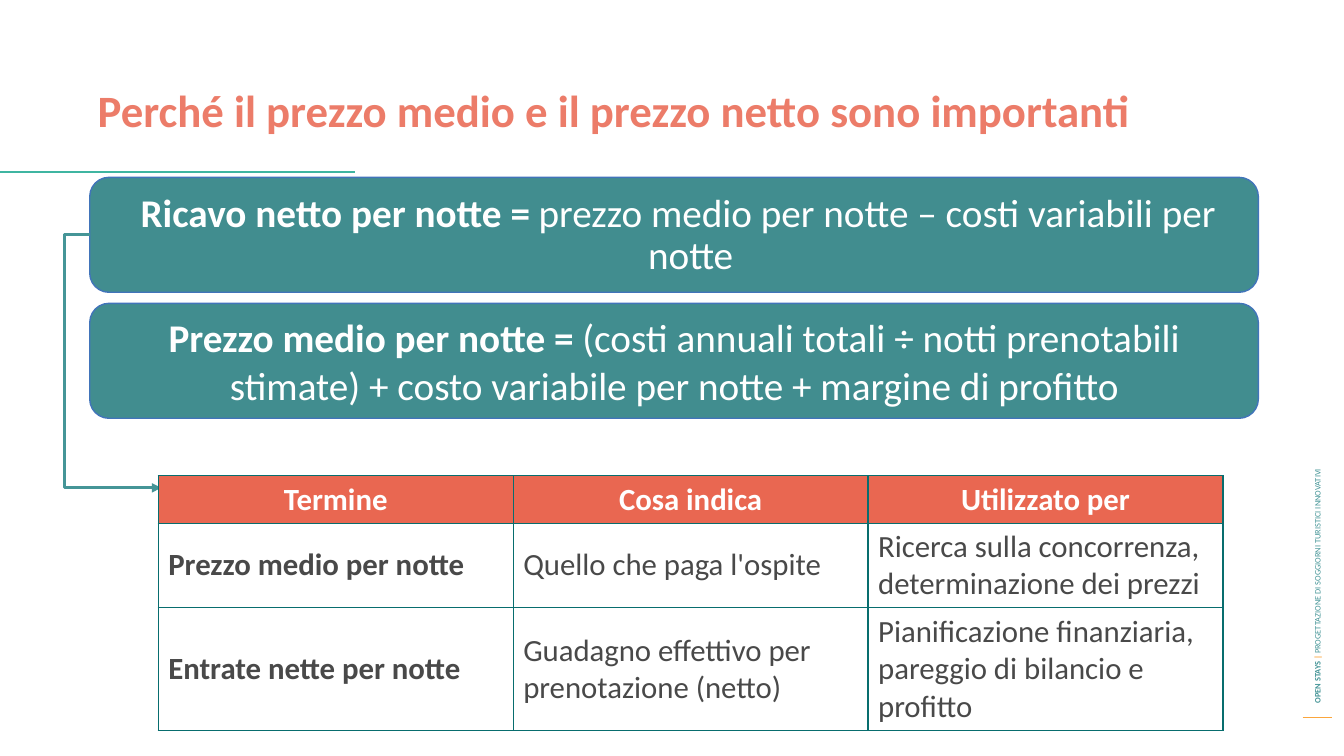
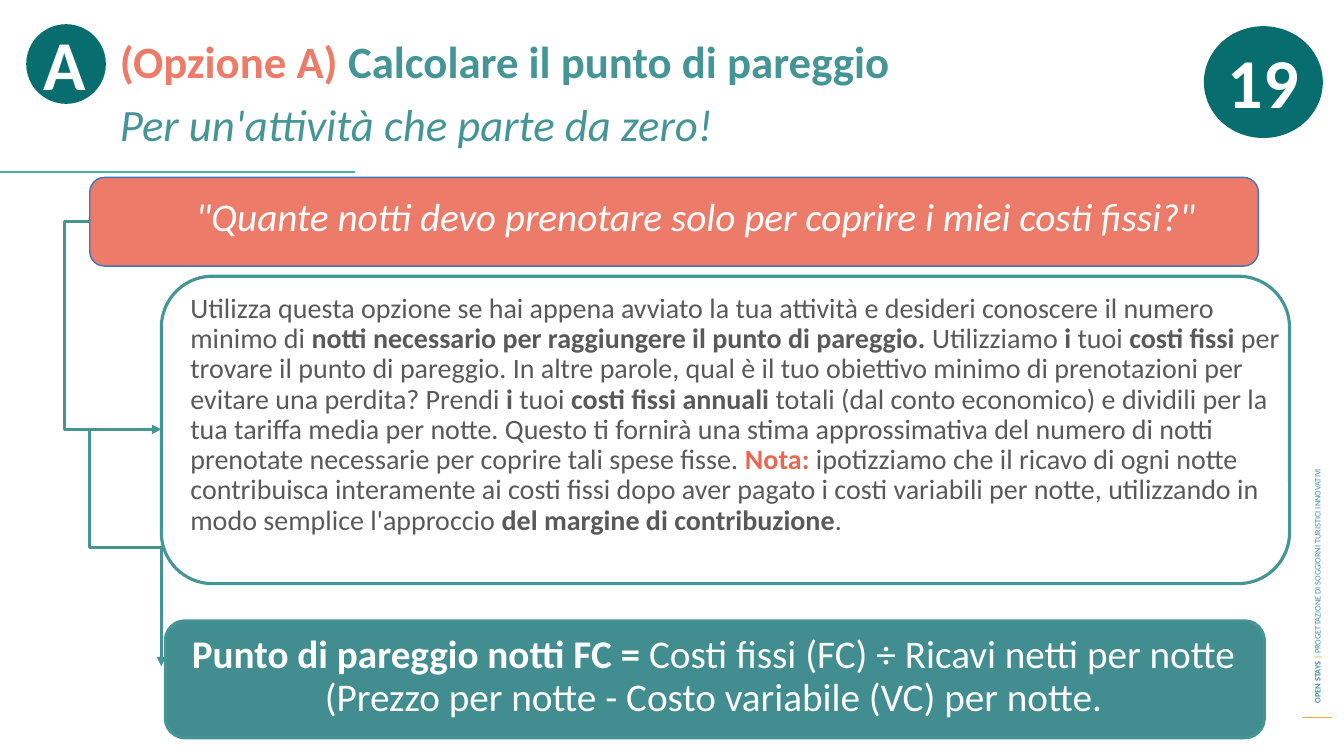
"""Build two slides on average price, net price and break-even nights."""
from dataclasses import dataclass
from typing import Any, Optional

import pptx
import pptx.dml.color
import pptx.enum.dml
import pptx.enum.shapes
import pptx.enum.text
import pptx.oxml.ns
import pptx.oxml.xmlchemy
import pptx.util
from lxml import etree

EMU_PER_PX = 9144
FONT = "Calibri"
COLOURS = {
    "white": "FFFFFF",
    "coral": "EC7C69",
    "red": "E96751",
    "teal": "459597",
    "panel": "418D8F",
    "dark": "086D6E",
    "mint": "3FB5A1",
    "amber": "FBA63D",
    "blue": "4174BA",
    "text": "595959",
    "cell": "494949",
}
SHAPES = pptx.enum.shapes.MSO_SHAPE
CONNECTORS = pptx.enum.shapes.MSO_CONNECTOR
ALIGN = pptx.enum.text.PP_ALIGN
ANCHOR = pptx.enum.text.MSO_ANCHOR


@dataclass(frozen=True)
class Area:
    left: int
    top: int
    width: int
    height: int

    def emu(self) -> list[int]:
        return [px(n) for n in (self.left, self.top, self.width, self.height)]


@dataclass(frozen=True)
class Span:
    text: str
    bold: bool = False
    italic: bool = False
    colour: Optional[str] = None


@dataclass(frozen=True)
class Panel:
    area: Area
    fill: Optional[str]
    line: Optional[str]
    weight: float = 1
    kind: Any = SHAPES.FLOWCHART_ALTERNATE_PROCESS


@dataclass(frozen=True)
class Elbow:
    start: tuple[int, int]
    end: tuple[int, int]
    bend: int
    vertical: bool = False


@dataclass(frozen=True)
class Badge:
    text: str
    disc: Area
    label: Area


def px(length: float) -> int:
    return round(length * EMU_PER_PX)


def rgb(name: str) -> pptx.dml.color.RGBColor:
    return pptx.dml.color.RGBColor.from_string(COLOURS[name])


def strong(text: str, colour: Optional[str] = None) -> Span:
    return Span(text, bold=True, colour=colour)


def alternate(text: str) -> list[Span]:
    return [Span(part, bold=index % 2 == 1) for index, part in enumerate(text.split("**"))]


def write(frame: Any, paragraphs: list[list[Span]], *, size: float, colour: str,
          align: Any = ALIGN.LEFT, anchor: Any = ANCHOR.TOP, spacing: float = 1.0,
          before: float = 0, after: float = 0, hanging: int = 0) -> None:
    frame.word_wrap = True
    frame.vertical_anchor = anchor
    for index, spans in enumerate(paragraphs):
        para = frame.paragraphs[0] if index == 0 else frame.add_paragraph()
        para.alignment = align
        para.line_spacing = spacing
        para.space_before = pptx.util.Pt(before if index else 0)
        para.space_after = pptx.util.Pt(after)
        if hanging:
            properties = para._p.get_or_add_pPr()
            properties.set("marL", str(px(hanging)))
            properties.set("indent", str(-px(hanging)))
        for span in spans:
            run = para.add_run()
            run.text = span.text
            run.font.name = FONT
            run.font.size = pptx.util.Pt(size)
            run.font.bold = span.bold
            run.font.italic = span.italic
            run.font.color.rgb = rgb(span.colour or colour)


def add_text(page: Any, area: Area, paragraphs: list[list[Span]], **style: Any) -> Any:
    box = page.shapes.add_textbox(*area.emu())
    write(box.text_frame, paragraphs, **style)
    return box


def add_panel(page: Any, panel: Panel) -> Any:
    shape = page.shapes.add_shape(panel.kind, *panel.area.emu())
    shape.shadow.inherit = False
    if panel.fill:
        shape.fill.solid()
        shape.fill.fore_color.rgb = rgb(panel.fill)
    else:
        shape.fill.background()
    if panel.line:
        shape.line.color.rgb = rgb(panel.line)
        shape.line.width = pptx.util.Pt(panel.weight)
    else:
        shape.line.fill.background()
    return shape


def add_badge(page: Any, badge: Badge) -> None:
    add_panel(page, Panel(badge.disc, "dark", None, kind=SHAPES.OVAL))
    add_text(page, badge.label, [[strong(badge.text)]], size=50, colour="white", align=ALIGN.CENTER)


def add_line(page: Any, start: tuple[int, int], end: tuple[int, int], colour: str,
             weight: float, kind: Any = CONNECTORS.STRAIGHT) -> Any:
    line = page.shapes.add_connector(kind, *[px(n) for n in (*start, *end)])
    line.line.color.rgb = rgb(colour)
    line.line.width = pptx.util.Pt(weight)
    etree.SubElement(line._element.spPr, pptx.oxml.ns.qn("a:effectLst"))
    return line


def add_elbow(page: Any, elbow: Elbow) -> None:
    (left, top), (right, bottom) = elbow.start, elbow.end
    start, end = elbow.start, elbow.end
    if elbow.vertical:
        middle_x, middle_y = (left + right) / 2, (top + bottom) / 2
        half_run, half_rise = (bottom - top) / 2, (right - left) / 2
        start = (middle_x + half_run, middle_y - half_rise)
        end = (middle_x - half_run, middle_y + half_rise)
    arrow = add_line(page, start, end, "teal", 2.25, CONNECTORS.ELBOW)
    properties = arrow._element.spPr
    if elbow.vertical:
        properties.find(pptx.oxml.ns.qn("a:xfrm")).set("rot", str(270 * 60000))
    guides = properties.find(pptx.oxml.ns.qn("a:prstGeom")).get_or_add_avLst()
    etree.SubElement(guides, pptx.oxml.ns.qn("a:gd"), name="adj1", fmla=f"val {elbow.bend}")
    outline = arrow.line._get_or_add_ln()
    etree.SubElement(outline, pptx.oxml.ns.qn("a:tailEnd"), type="triangle")


def add_borders(cell: Any) -> None:
    properties = cell._tc.get_or_add_tcPr()
    for index, side in enumerate(("lnL", "lnR", "lnT", "lnB")):
        edge = etree.Element(pptx.oxml.ns.qn(f"a:{side}"), w=str(pptx.util.Pt(1)))
        fill = etree.SubElement(edge, pptx.oxml.ns.qn("a:solidFill"))
        etree.SubElement(fill, pptx.oxml.ns.qn("a:srgbClr"), val=COLOURS["dark"])
        properties.insert(index, edge)


def add_terms_table(page: Any, area: Area, heights: list[int], rows: list[list[str]]) -> None:
    table = page.shapes.add_table(len(rows), len(rows[0]), *area.emu()).table
    table.first_row = table.horz_banding = False
    for column in table.columns:
        column.width = px(area.width / len(rows[0]))
    for row_index, texts in enumerate(rows):
        header = row_index == 0
        table.rows[row_index].height = px(heights[row_index])
        for column_index, text in enumerate(texts):
            cell = table.cell(row_index, column_index)
            if header:
                cell.fill.solid()
                cell.fill.fore_color.rgb = rgb("red")
            else:
                cell.fill.background()
            write(cell.text_frame, [[Span(text, bold=header or column_index == 0)]], size=22,
                  colour="white" if header else "cell",
                  align=ALIGN.CENTER if header else ALIGN.LEFT)
            cell.vertical_anchor = ANCHOR.MIDDLE
            add_borders(cell)


def add_page(deck: Any, title_area: Area, title: list[list[Span]]) -> Any:
    page = deck.slides.add_slide(deck.slide_layouts[6])
    add_line(page, (1292, 712), (1321, 712), "amber", 0.75)
    footer = [strong("OPEN STAYS "), strong("| ", "amber"),
              Span("PROGETTAZIONE DI SOGGIORNI TURISTICI INNOVATIVI")]
    box = add_text(page, Area(1018, 409, 577, 20), [footer], size=6, colour="teal",
                   anchor=ANCHOR.MIDDLE)
    box.rotation = 270
    add_text(page, title_area, title, size=32, colour="teal", spacing=0.9, before=10)
    add_line(page, (0, 171), (352, 171), "mint", 1.5)
    return page


def build_prices(deck: Any) -> None:
    page = add_page(deck, Area(87, 83, 1161, 88),
                    [[strong("Perché il prezzo medio e il prezzo netto sono importanti", "coral")]])
    add_panel(page, Panel(Area(89, 176, 1159, 114), "panel", "blue"))
    add_text(page, Area(92, 187, 1161, 88),
             [[strong("Ricavo netto per notte = "),
               Span("prezzo medio per notte – costi variabili per notte")]],
             size=28, colour="white", align=ALIGN.CENTER, spacing=0.9, after=12, hanging=25)
    add_elbow(page, Elbow((89, 233), (160, 484), -35600))
    add_terms_table(page, Area(157, 472, 1056, 253), [47, 84, 122], [
        ["Termine", "Cosa indica", "Utilizzato per"],
        ["Prezzo medio per notte", "Quello che paga l'ospite",
         "Ricerca sulla concorrenza, determinazione dei prezzi"],
        ["Entrate nette per notte", "Guadagno effettivo per prenotazione (netto)",
         "Pianificazione finanziaria, pareggio di bilancio e profitto"],
    ])
    average = add_panel(page, Panel(Area(89, 301, 1159, 114), "panel", "blue"))
    write(average.text_frame,
          [[strong("Prezzo medio per notte = "),
            Span("(costi annuali totali ÷ notti prenotabili stimate) + costo variabile per notte"
                 " + margine di profitto")]],
          size=28, colour="white", align=ALIGN.CENTER, anchor=ANCHOR.MIDDLE, after=12)


def build_break_even(deck: Any) -> None:
    page = add_page(deck, Area(109, 35, 1161, 88), [
        [strong("(Opzione A) ", "coral"), strong("Calcolare il punto di pareggio")],
        [Span("Per un'attività che parte da zero!", italic=True)],
    ])
    add_panel(page, Panel(Area(89, 176, 1159, 88), "coral", "blue"))
    add_text(page, Area(109, 191, 1161, 88),
             [[Span('"Quante notti devo prenotare solo per coprire i miei costi fissi?"',
                    italic=True)]],
             size=28, colour="white", align=ALIGN.CENTER, spacing=0.9, after=6, hanging=25)
    explanation = alternate(
        "Utilizza questa opzione se hai appena avviato la tua attività e desideri conoscere il "
        "numero minimo di **notti necessario per raggiungere il punto di pareggio. **Utilizziamo "
        "**i** tuoi **costi fissi **per trovare il punto di pareggio. In altre parole, qual è il "
        "tuo obiettivo minimo di prenotazioni per evitare una perdita? Prendi **i** tuoi **costi "
        "fissi annuali** totali (dal conto economico) e dividili per la tua tariffa media per "
        "notte. Questo ti fornirà una stima approssimativa del numero di notti prenotate "
        "necessarie per coprire tali spese fisse. ")
    note = alternate(
        "ipotizziamo che il ricavo di ogni notte contribuisca interamente ai costi fissi dopo "
        "aver pagato i costi variabili per notte, utilizzando in modo semplice l'approccio **del "
        "margine di contribuzione**.")
    add_text(page, Area(179, 287, 1110, 88), [[*explanation, strong("Nota: ", "red"), *note]],
             size=20, colour="text", spacing=0.9, after=6)
    add_panel(page, Panel(Area(160, 274, 1119, 305), None, "teal", 2.25))
    add_panel(page, Panel(Area(164, 616, 1090, 116), "panel", "teal", 2.25))
    add_elbow(page, Elbow((89, 220), (160, 426), -35600))
    add_elbow(page, Elbow((89, 426), (160, 661), 50000, vertical=True))
    add_text(page, Area(176, 625, 1063, 88),
             [[strong("Punto di pareggio notti FC = "),
               Span("Costi fissi (FC) ÷ Ricavi netti per notte (Prezzo per notte - Costo variabile"
                    " (VC) per notte.")]],
             size=28, colour="white", align=ALIGN.CENTER, spacing=0.9, after=12)
    for badge in (Badge("A", Area(26, 24, 79, 79), Area(27, 15, 75, 94)),
                  Badge("19", Area(1194, 26, 118, 111), Area(1194, 33, 118, 94))):
        add_badge(page, badge)


def main() -> None:
    deck = pptx.Presentation()
    deck.slide_width, deck.slide_height = px(1333), px(750)
    build_prices(deck)
    build_break_even(deck)
    deck.save("out.pptx")


if __name__ == "__main__":
    main()
